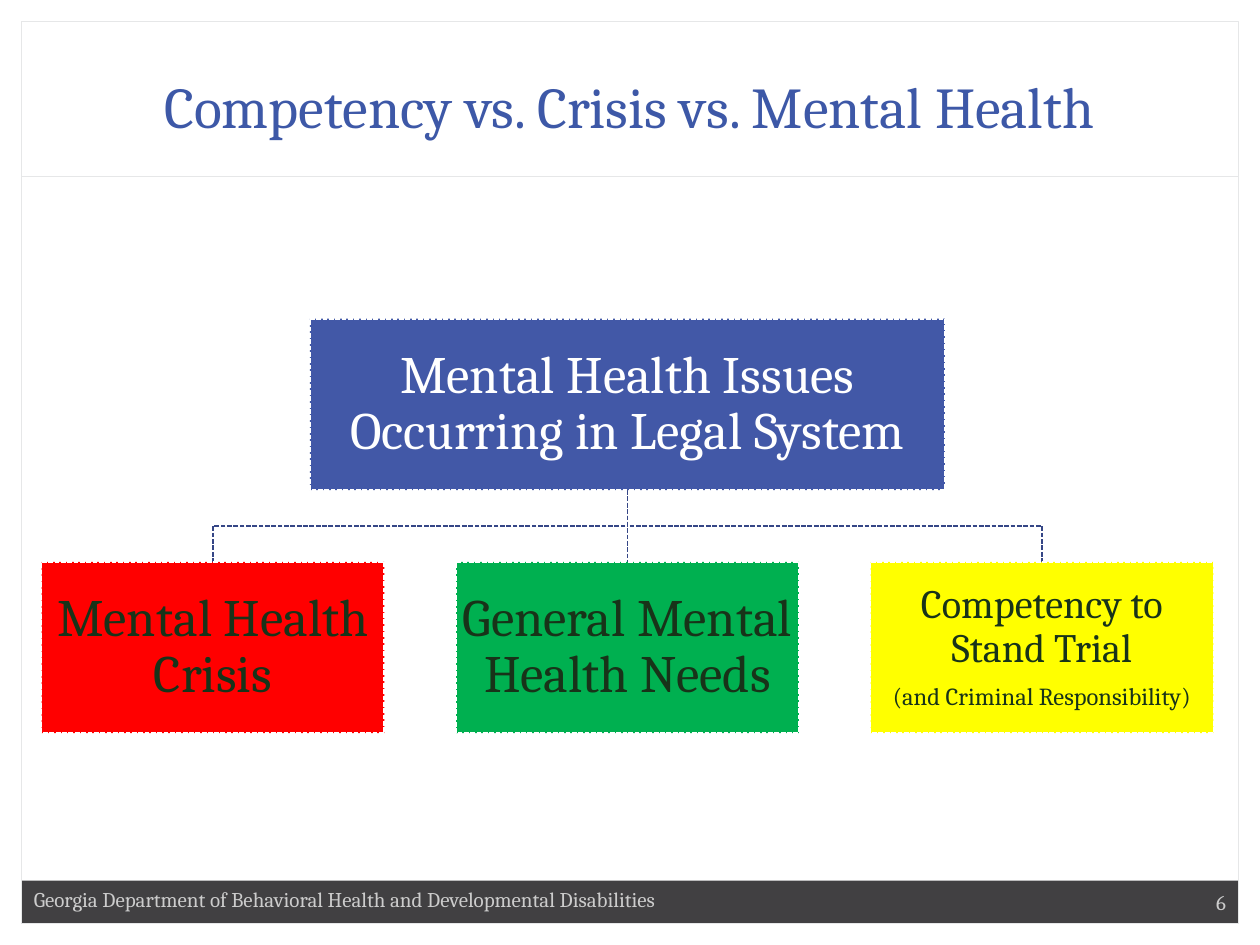
from dataclasses import dataclass

from lxml import etree
from pptx import Presentation
from pptx.dml.color import RGBColor
from pptx.enum import dml, shapes, text
from pptx.oxml import ns
from pptx.util import Inches, Pt


@dataclass(frozen=True)
class Theme:
    font: str = "Cambria"
    title: str = "3D58A7"
    rule: str = "E6E7E8"
    bar: str = "414042"
    footer: str = "CCCCCC"
    link: str = "354686"
    light: str = "FFFFFF"
    dark: str = "183319"
    root: str = "4258A7"
    crisis: str = "FF0000"
    general: str = "00B050"
    competency: str = "FFFF00"
    title_size: float = 33
    box_size: float = 30
    small_box_size: float = 23
    note_size: float = 14
    footer_size: float = 12
    thin: float = 0.75
    dashed: float = 0.9


THEME = Theme()
BOX_HEIGHT = 1.36
ROOT_TOP, ROOT_WIDTH = 2.53, 5.04
BRANCH_TOP, BRANCH_WIDTH, BRANCH_PITCH = 4.46, 2.72, 3.29
CENTER = 4.98


def style_line(shape, color, width, dashed=False):
    shape.line.color.rgb = RGBColor.from_string(color)
    shape.line.width = Pt(width)
    if dashed:
        shape.line.dash_style = dml.MSO_LINE.SQUARE_DOT


def add_rectangle(slide, left, top, width, height, fill=None):
    shape = slide.shapes.add_shape(
        shapes.MSO_SHAPE.RECTANGLE, Inches(left), Inches(top), Inches(width), Inches(height)
    )
    shape.shadow.inherit = False
    if fill:
        shape.fill.solid()
        shape.fill.fore_color.rgb = RGBColor.from_string(fill)
    else:
        shape.fill.background()
    shape.line.fill.background()
    return shape


def write_text(shape, lines, color, align, anchor):
    frame = shape.text_frame
    frame.word_wrap = True
    frame.vertical_anchor = anchor
    for index, (words, size) in enumerate(lines):
        paragraph = frame.add_paragraph() if index else frame.paragraphs[0]
        paragraph.text = words
        paragraph.alignment = align
        paragraph.font.name = THEME.font
        paragraph.font.size = Pt(size)
        paragraph.font.color.rgb = RGBColor.from_string(color)
    return frame


def add_label(slide, left, top, width, height, words, size, color, align, anchor):
    label = slide.shapes.add_textbox(Inches(left), Inches(top), Inches(width), Inches(height))
    write_text(label, [(words, size)], color, align, anchor)


def add_line(slide, start, end, color, width, dashed=False):
    line = slide.shapes.add_connector(
        shapes.MSO_CONNECTOR.STRAIGHT, *(Inches(value) for value in (*start, *end))
    )
    style_line(line, color, width, dashed)
    etree.SubElement(line._element.spPr, ns.qn("a:effectLst"))


def add_elbow(slide, start, end):
    middle = (start[1] + end[1]) / 2
    corners = [(start[0], middle), (end[0], middle), end]
    builder = slide.shapes.build_freeform(Inches(start[0]), Inches(start[1]))
    builder.add_line_segments([(Inches(x), Inches(y)) for x, y in corners], close=False)
    elbow = builder.convert_to_shape()
    elbow.shadow.inherit = False
    elbow.fill.background()
    style_line(elbow, THEME.link, THEME.dashed, dashed=True)


def add_box(slide, center, top, width, fill, color, lines):
    box = add_rectangle(slide, center - width / 2, top, width, BOX_HEIGHT, fill)
    style_line(box, THEME.light, THEME.dashed, dashed=True)
    frame = write_text(box, lines, color, text.PP_ALIGN.CENTER, text.MSO_ANCHOR.MIDDLE)
    frame.margin_left = frame.margin_right = Inches(0.02)
    frame.margin_top = frame.margin_bottom = Inches(0.02)
    for paragraph in frame.paragraphs:
        paragraph.line_spacing = 0.9
    for paragraph in frame.paragraphs[:-1]:
        paragraph.space_after = Pt(8)


def add_page_frame(slide):
    bar = add_rectangle(slide, 0.17, 6.99, 9.66, 0.34, THEME.bar)
    write_text(bar, [("6", THEME.footer_size)], THEME.footer,
               text.PP_ALIGN.RIGHT, text.MSO_ANCHOR.MIDDLE)
    border = add_rectangle(slide, 0.17, 0.17, 9.66, 7.16)
    style_line(border, THEME.rule, THEME.thin)
    add_line(slide, (0.17, 1.4), (9.83, 1.4), THEME.rule, THEME.thin)
    add_label(slide, 0.17, 6.99, 6, 0.3,
              "Georgia Department of Behavioral Health and Developmental Disabilities",
              THEME.footer_size, THEME.footer, text.PP_ALIGN.LEFT, text.MSO_ANCHOR.TOP)


def add_hierarchy(slide):
    branches = [
        (THEME.crisis, [("Mental Health Crisis", THEME.box_size)]),
        (THEME.general, [("General Mental Health Needs", THEME.box_size)]),
        (THEME.competency, [("Competency to Stand Trial", THEME.small_box_size),
                            ("(and Criminal Responsibility)", THEME.note_size)]),
    ]
    centers = [CENTER + (index - 1) * BRANCH_PITCH for index in range(len(branches))]
    start = (CENTER, ROOT_TOP + BOX_HEIGHT)
    for center in centers:
        end = (center, BRANCH_TOP)
        if center == CENTER:
            add_line(slide, start, end, THEME.link, THEME.dashed, dashed=True)
        else:
            add_elbow(slide, start, end)
    add_box(slide, CENTER, ROOT_TOP, ROOT_WIDTH, THEME.root, THEME.light,
            [("Mental Health Issues Occurring in Legal System", THEME.box_size)])
    for center, (fill, lines) in zip(centers, branches):
        add_box(slide, center, BRANCH_TOP, BRANCH_WIDTH, fill, THEME.dark, lines)


def main():
    presentation = Presentation()
    presentation.slide_width = Inches(10)
    presentation.slide_height = Inches(7.5)
    slide = presentation.slides.add_slide(presentation.slide_layouts[6])
    add_page_frame(slide)
    add_label(slide, 0.33, 0.33, 9.33, 0.83, "Competency vs. Crisis vs. Mental Health",
              THEME.title_size, THEME.title, text.PP_ALIGN.CENTER, text.MSO_ANCHOR.BOTTOM)
    add_hierarchy(slide)
    presentation.save("out.pptx")


if __name__ == "__main__":
    main()
